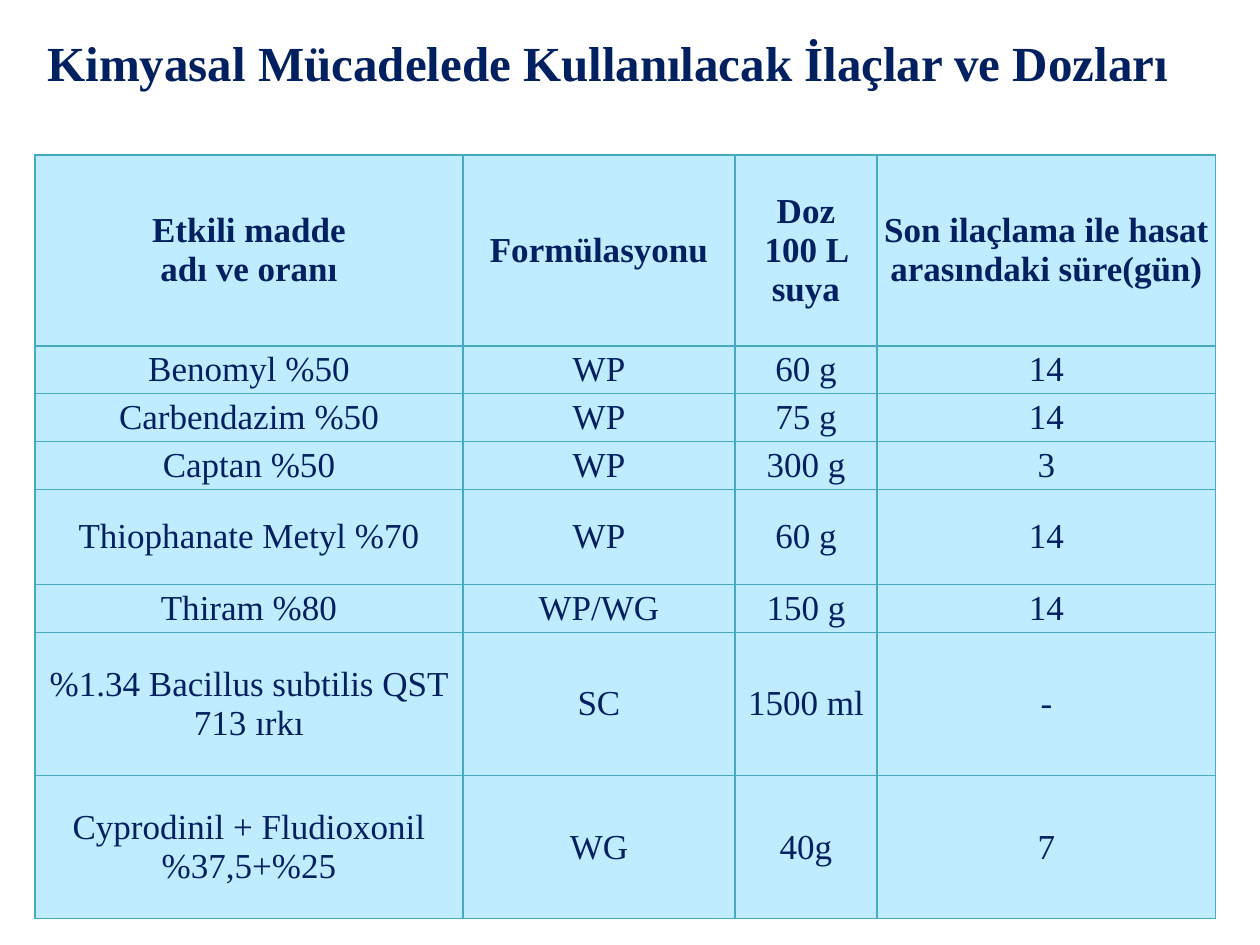
from lxml.etree import SubElement
from pptx import Presentation
from pptx.dml.color import RGBColor
from pptx.enum.text import MSO_ANCHOR as Anchor, MSO_AUTO_SIZE as AutoSize, PP_ALIGN as Align
from pptx.oxml.ns import qn
from pptx.util import Pt

PX = 914400 / 126
FONT = "Times New Roman"
COLORS = {"text": "002060", "cell": "BFECFF", "border": "46AAC5"}

COL_WIDTHS = [428, 272, 142, 339]
ROW_UNITS = [4, 1, 1, 1, 2, 1, 3, 3]  # row heights as shares of the table height
TABLE_HEIGHT = 764
ROWS = [
    ["Etkili madde\nadı ve oranı", "Formülasyonu", "Doz\n100 L suya",
     "Son ilaçlama ile hasat\narasındaki süre(gün)"],
    ["Benomyl %50", "WP", "60 g", "14"],
    ["Carbendazim %50", "WP", "75 g", "14"],
    ["Captan %50", "WP", "300 g", "3"],
    ["Thiophanate Metyl %70", "WP", "60 g", "14"],
    ["Thiram %80", "WP/WG", "150 g", "14"],
    ["%1.34 Bacillus subtilis QST 713 ırkı", "SC", "1500 ml", "-"],
    ["Cyprodinil + Fludioxonil %37,5+%25", "WG", "40g", "7"],
]


def px(n):
    return round(n * PX)


def write(tf, text, size, bold, align):
    p = tf.paragraphs[0]
    p.alignment = align
    for i, line in enumerate(text.split("\n")):
        if i:
            p.add_line_break()
        r = p.add_run()
        r.text = line
        r.font.name = FONT
        r.font.size = Pt(size)
        r.font.bold = bold
        r.font.color.rgb = RGBColor.from_string(COLORS["text"])


def add_title(s, text):
    title = s.shapes.title
    title.left, title.top, title.width, title.height = px(35), px(26), px(1191), px(72)
    tf = title.text_frame
    tf.word_wrap = True
    tf.auto_size = AutoSize.NONE
    tf.vertical_anchor = Anchor.TOP
    write(tf, text, 28, True, Align.JUSTIFY)


def add_borders(cell):
    tc_pr = cell._tc.get_or_add_tcPr()
    for side in ("lnL", "lnR", "lnT", "lnB"):
        ln = SubElement(tc_pr, qn(f"a:{side}"), w=str(Pt(0.75)))
        fill = SubElement(ln, qn("a:solidFill"))
        SubElement(fill, qn("a:srgbClr"), val=COLORS["border"])


def format_cell(cell, text, bold):
    cell.margin_left = cell.margin_right = cell.margin_top = cell.margin_bottom = 0
    cell.vertical_anchor = Anchor.MIDDLE
    add_borders(cell)
    cell.fill.solid()
    cell.fill.fore_color.rgb = RGBColor.from_string(COLORS["cell"])
    write(cell.text_frame, text, 20, bold, Align.CENTER)


def add_dose_table(s):
    frame = s.shapes.add_table(len(ROWS), len(COL_WIDTHS), px(35), px(155),
                               px(sum(COL_WIDTHS)), px(TABLE_HEIGHT))
    table = frame.table
    table.horz_banding = False
    for col, width in zip(table.columns, COL_WIDTHS):
        col.width = px(width)
    for row, units in zip(table.rows, ROW_UNITS):
        row.height = px(TABLE_HEIGHT * units / sum(ROW_UNITS))
    for i, texts in enumerate(ROWS):
        for j, text in enumerate(texts):
            format_cell(table.cell(i, j), text, bold=i == 0)


def main():
    prs = Presentation()
    prs.slide_width, prs.slide_height = px(1260), px(945)
    s = prs.slides.add_slide(prs.slide_layouts[5])  # title only
    add_title(s, "Kimyasal Mücadelede Kullanılacak İlaçlar ve Dozları")
    add_dose_table(s)
    prs.save("out.pptx")


if __name__ == "__main__":
    main()
